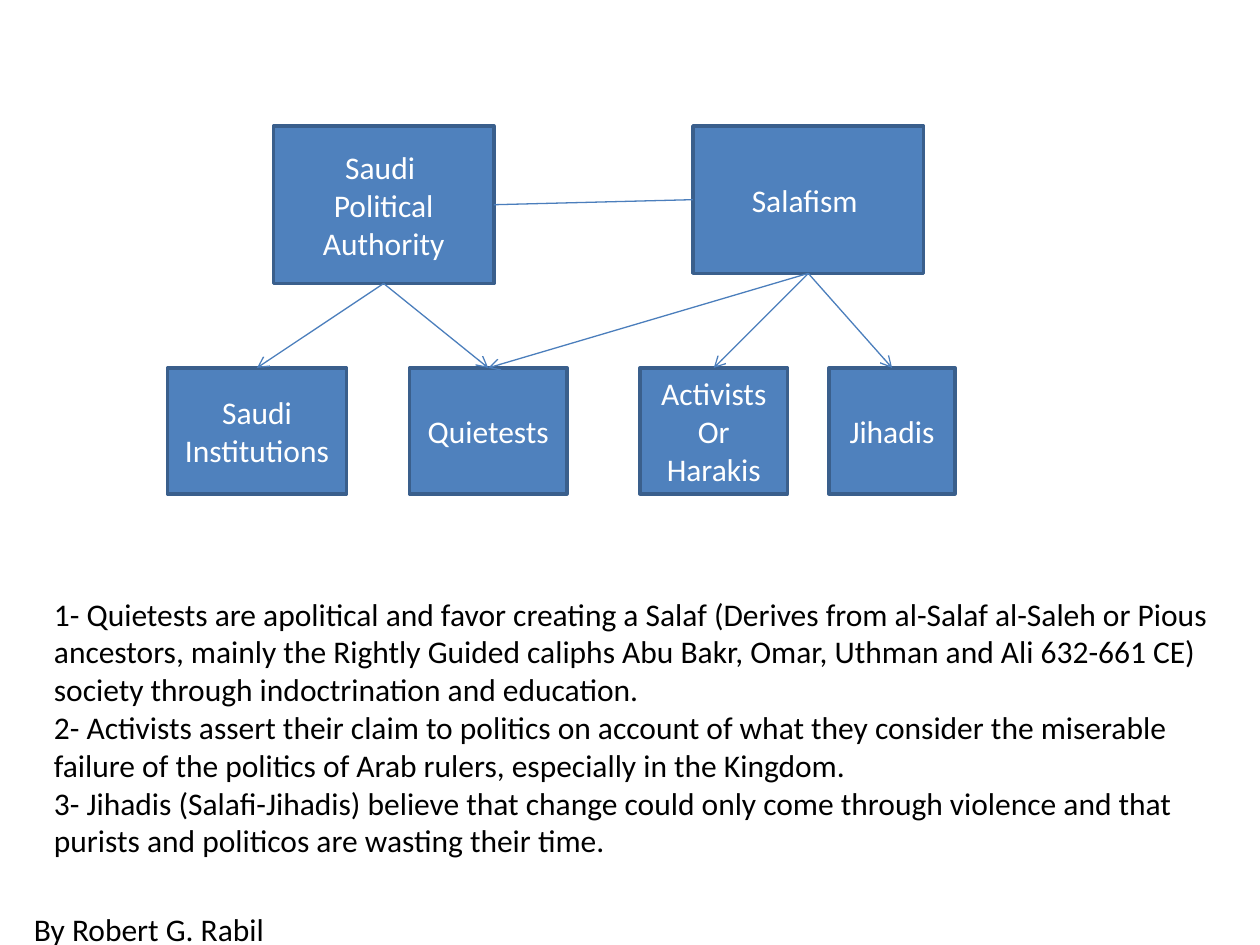
"""Build a slide showing how Saudi authority and Salafism relate to their branches."""
from lxml import etree
from pptx import Presentation
from pptx.dml.color import RGBColor
from pptx.enum.shapes import MSO_CONNECTOR, MSO_SHAPE
from pptx.enum.text import MSO_ANCHOR, PP_ALIGN
from pptx.oxml.ns import qn
from pptx.util import Inches, Pt

RECT = MSO_SHAPE.RECTANGLE
LINE = MSO_CONNECTOR.STRAIGHT
MIDDLE, TOP = MSO_ANCHOR.MIDDLE, MSO_ANCHOR.TOP
CENTER, LEFT = PP_ALIGN.CENTER, PP_ALIGN.LEFT


def rgb(code):
    return RGBColor.from_string(code)


def write(shape, lines, color="000000", align=LEFT, anchor=TOP, wrap=True):
    frame = shape.text_frame
    frame.word_wrap = wrap
    frame.vertical_anchor = anchor
    frame.text = "\n".join(lines)
    for para in frame.paragraphs:
        para.alignment = align
        for run in para.runs:
            run.font.name = "Calibri"
            run.font.size = Pt(18)
            run.font.color.rgb = rgb(color)


deck = Presentation()
deck.slide_width, deck.slide_height = Inches(10), Inches(7.5)
slide = deck.slides.add_slide(deck.slide_layouts[6])
shapes = slide.shapes

nodes = [
    ("state", 2.17, 1, 1.75, 1.25, ["Saudi ", "Political", "Authority"]),
    ("salaf", 5.5, 1, 1.83, 1.17, ["Salafism "]),
    ("bodies", 1.33, 2.92, 1.42, 1, ["Saudi Institutions"]),
    ("quiet", 3.25, 2.92, 1.25, 1, ["Quietests"]),
    ("active", 5.08, 2.92, 1.17, 1, ["Activists", "Or", "Harakis"]),
    ("jihad", 6.58, 2.92, 1, 1, ["Jihadis"]),
]
boxes = {}
for key, left, top, width, height, lines in nodes:
    box = shapes.add_shape(RECT, Inches(left), Inches(top), Inches(width), Inches(height))
    box.shadow.inherit = False
    box.fill.solid()
    box.fill.fore_color.rgb = rgb("4F81BD")
    box.line.color.rgb = rgb("3A5F8C")
    box.line.width = Pt(2)
    write(box, lines, color="FFFFFF", align=CENTER, anchor=MIDDLE)
    boxes[key] = box

links = [
    ("state", 3, "salaf", 1, False),
    ("salaf", 2, "quiet", 0, True),
    ("salaf", 2, "active", 0, True),
    ("salaf", 2, "jihad", 0, True),
    ("state", 2, "quiet", 0, True),
    ("state", 2, "bodies", 0, True),
]
for start, out, end, into, arrow in links:
    link = shapes.add_connector(LINE, 0, 0, 0, 0)
    link.begin_connect(boxes[start], out)
    link.end_connect(boxes[end], into)
    link.line.color.rgb = rgb("4B7EBC")
    link.line.width = Pt(0.75)
    props = link._element.spPr
    if arrow:
        etree.SubElement(props.find(qn("a:ln")), qn("a:tailEnd"), type="arrow")
    etree.SubElement(props, qn("a:effectLst"))

notes = shapes.add_textbox(Inches(0.33), Inches(4.67), Inches(9.67), Inches(2.22))
write(notes, [
    "1- Quietests are apolitical and favor creating a Salaf (Derives from al-Salaf al-Saleh "
    "or Pious ancestors, mainly the Rightly Guided caliphs Abu Bakr, Omar, Uthman and Ali "
    "632-661 CE) society through indoctrination and education.",
    "2- Activists assert their claim to politics on account of what they consider the "
    "miserable failure of the politics of Arab rulers, especially in the Kingdom.",
    "3- Jihadis (Salafi-Jihadis) believe that change could only come through violence and "
    "that purists and politicos are wasting their time.",
])

credit = shapes.add_textbox(Inches(0.17), Inches(7.17), Inches(2.05), Inches(0.4))
write(credit, ["By Robert G. Rabil"], wrap=False)

deck.save("out.pptx")
